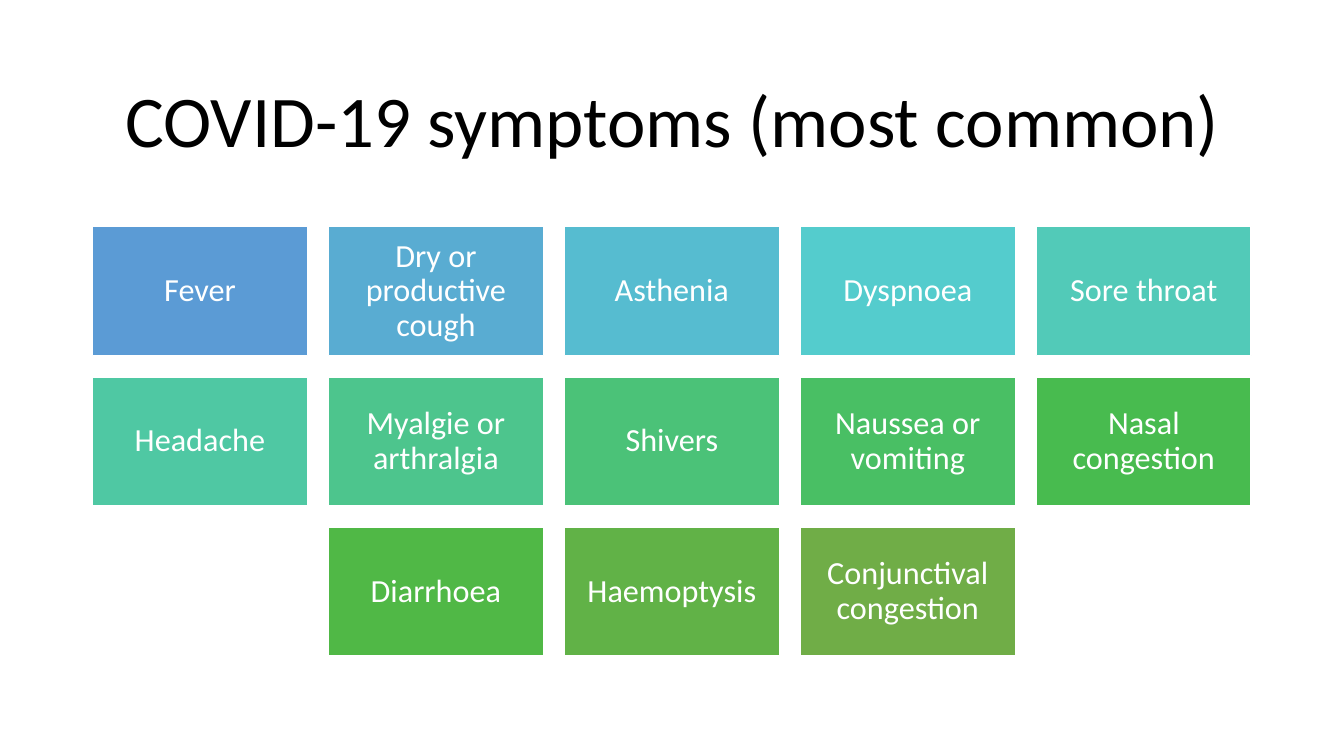
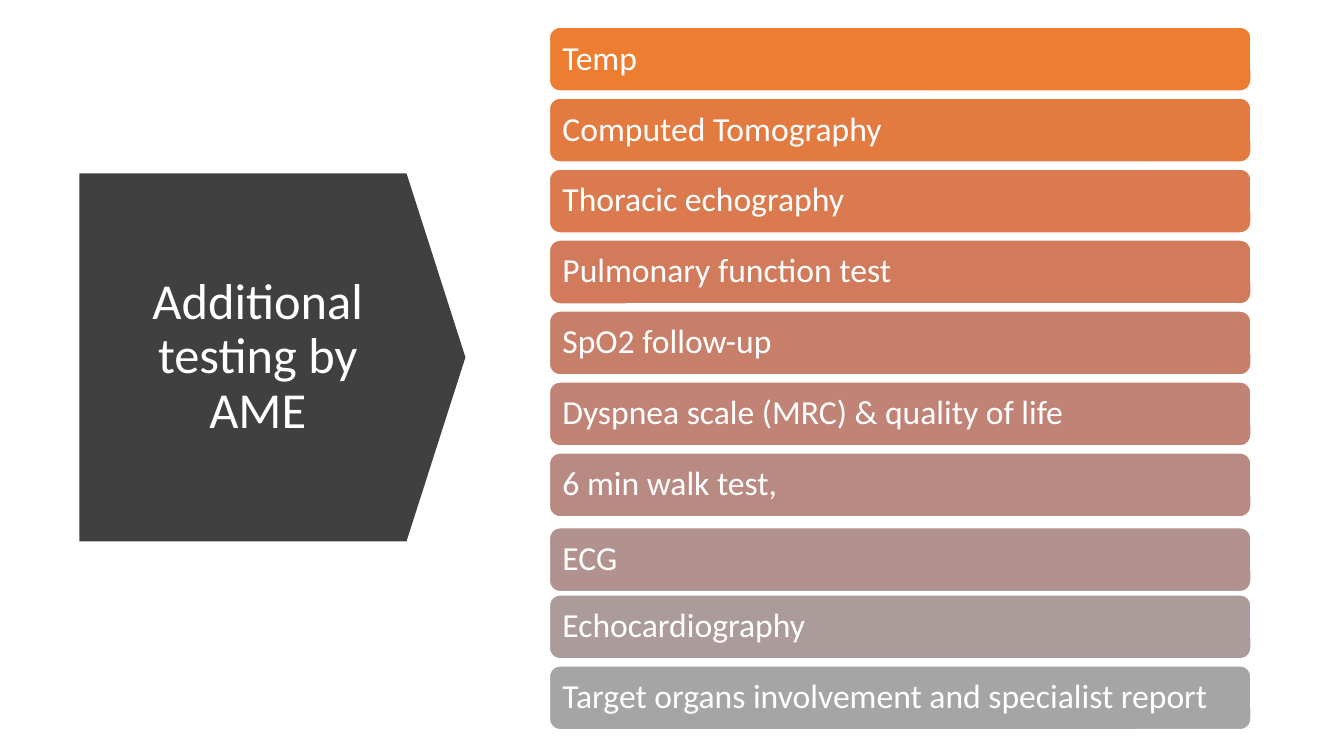
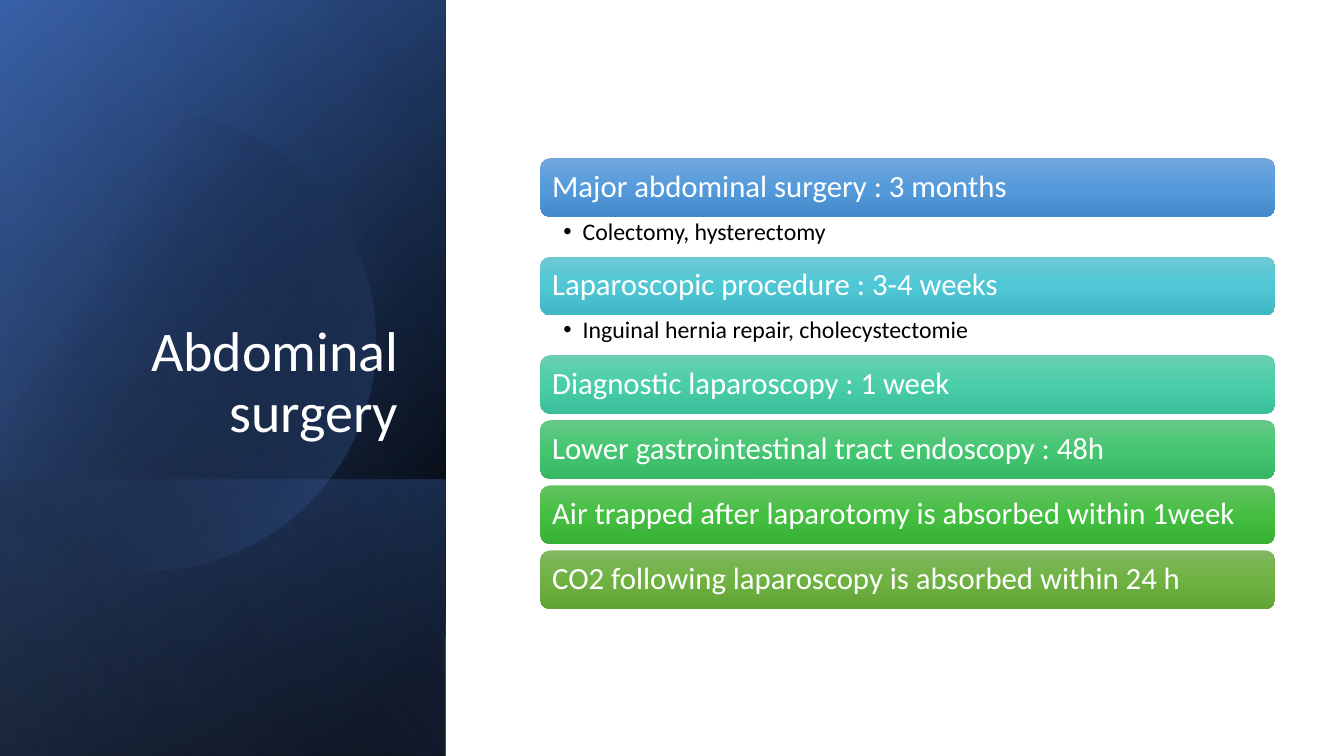
from dataclasses import dataclass
from math import acos, cos, sin

from lxml.etree import SubElement
from pptx import Presentation
from pptx.dml.color import RGBColor
from pptx.enum.shapes import MSO_SHAPE
from pptx.enum.text import MSO_ANCHOR, PP_ALIGN
from pptx.oxml.ns import qn
from pptx.util import Inches, Pt


@dataclass(frozen=True)
class Theme:
    font: str = "Calibri"
    white: str = "FFFFFF"
    black: str = "000000"
    charcoal: str = "404040"
    navy: str = "2F5597"
    blue: str = "4472C4"
    pale_blue: str = "8FAADC"
    headline: int = 52
    side_title: int = 40
    arrow_title: int = 36
    test: int = 24
    symptom: int = 23
    surgery: int = 22
    note: int = 17
    line_spacing: float = 0.9


@dataclass(frozen=True)
class Box:
    left: float
    top: float
    width: float
    height: float

    def share(self, left, top, width, height):
        return Box(
            self.left + self.width * left / 100,
            self.top + self.height * top / 100,
            self.width * width / 100,
            self.height * height / 100,
        )

    def cell(self, column, row, columns, rows, gap):
        width = (self.width - gap * (columns - 1)) / columns
        height = (self.height - gap * (rows - 1)) / rows
        return Box(
            self.left + column * (width + gap),
            self.top + row * (height + gap),
            width,
            height,
        )

    def quarter_turn(self):
        shift = (self.width - self.height) / 2
        return Box(self.left + shift, self.top - shift, self.height, self.width)

    def place(self):
        return [Inches(side) for side in (self.left, self.top, self.width, self.height)]


THEME = Theme()
SLIDE = Box(0, 0, 13.33, 7.5)

SYMPTOMS = [
    [
        ("Fever", "5B9BD5"),
        ("Dry or productive cough", "59ACD2"),
        ("Asthenia", "56BCD0"),
        ("Dyspnoea", "54CCCD"),
        ("Sore throat", "52CAB8"),
    ],
    [
        ("Headache", "4FC8A3"),
        ("Myalgie or arthralgia", "4DC58D"),
        ("Shivers", "4BC278"),
        ("Naussea or vomiting", "49BF64"),
        ("Nasal congestion", "48BB4F"),
    ],
    [
        ("Diarrhoea", "50B846"),
        ("Haemoptysis", "61B247"),
        ("Conjunctival congestion", "70AD47"),
    ],
]

TESTS = [
    ("Temp", "ED7D31", 0),
    ("Computed Tomography", "E37A40", 0),
    ("Thoracic echography", "DA7A4E", 0),
    ("Pulmonary function test", "D17B5C", 0),
    ("SpO2 follow-up", "C87F69", 0),
    ("Dyspnea scale (MRC) & quality of life", "C08376", 0),
    ("6 min walk test,", "B98A82", 0),
    ("ECG", "B2928E", 6),
    ("Echocardiography", "AB9B9A", 0),
    ("Target organs involvement and specialist report", "A5A5A5", 0),
]

SURGERIES = [
    ("Major abdominal surgery : 3 months", "Colectomy, hysterectomy",
     ("71A6DB", "559BDB", "448ACA")),
    ("Laparoscopic procedure : 3-4 weeks", "Inguinal hernia repair, cholecystectomie",
     ("6DCAD5", "4FC7D5", "3FB7C4")),
    ("Diagnostic laparoscopy : 1 week", None, ("69CFB1", "4ACEAA", "3BBE9A")),
    ("Lower gastrointestinal tract endoscopy : 48h", None,
     ("66C885", "45C772", "37B764")),
    ("Air trapped after laparotomy is absorbed within 1week", None,
     ("64C162", "44BF41", "37B034")),
    ("CO2 following laparoscopy is absorbed within 24 h", None,
     ("81B861", "6FB242", "62A336")),
]


def assign(target, values):
    for name, value in values.items():
        setattr(target, name, value)


def write_text(shape, text, size, colour, align=PP_ALIGN.LEFT,
               anchor=MSO_ANCHOR.MIDDLE, insets=(0.1, 0.1, 0.1, 0.1)):
    frame = shape.text_frame
    left, top, right, bottom = [Inches(inset) for inset in insets]
    assign(frame, {
        "word_wrap": True,
        "vertical_anchor": anchor,
        "margin_left": left,
        "margin_top": top,
        "margin_right": right,
        "margin_bottom": bottom,
    })
    para = frame.paragraphs[0]
    assign(para, {"alignment": align, "line_spacing": THEME.line_spacing})
    span = para.add_run()
    span.text = text
    assign(span.font, {"name": THEME.font, "size": Pt(size)})
    span.font.color.rgb = RGBColor.from_string(colour)
    return para


def add_title(page, box, text, size, colour, align=PP_ALIGN.CENTER,
              anchor=MSO_ANCHOR.MIDDLE):
    title = page.shapes.add_textbox(*box.place())
    write_text(title, text, size, colour, align, anchor, (0.1, 0.05, 0.1, 0.05))


def add_block(page, kind, box, fill=None, outline=None):
    block = page.shapes.add_shape(kind, *box.place())
    block.shadow.inherit = False
    if fill:
        block.fill.solid()
        block.fill.fore_color.rgb = RGBColor.from_string(fill)
    if outline:
        block.line.color.rgb = RGBColor.from_string(outline)
        block.line.width = Pt(1)
    else:
        block.line.fill.background()
    return block


def paint_gradient(shape, stops, angle):
    shape.fill.gradient()
    shape.fill.gradient_angle = 360 - angle
    stop_list = shape._element.spPr.find(".//" + qn("a:gsLst"))
    for old_stop in list(stop_list):
        stop_list.remove(old_stop)
    for position, colour, opacity in stops:
        stop = SubElement(stop_list, qn("a:gs"), pos=str(position * 1000))
        tint = SubElement(stop, qn("a:srgbClr"), val=colour)
        if opacity < 100:
            SubElement(tint, qn("a:alpha"), val=str(opacity * 1000))


def add_symptom_grid(page, box):
    columns = len(SYMPTOMS[0])
    for row, symptoms in enumerate(SYMPTOMS):
        indent = (columns - len(symptoms)) / 2
        for column, (symptom, colour) in enumerate(symptoms):
            cell = box.cell(column + indent, row, columns, len(SYMPTOMS), 0.21)
            tile = add_block(page, MSO_SHAPE.RECTANGLE, cell, colour, THEME.white)
            write_text(tile, symptom, THEME.symptom, THEME.white, PP_ALIGN.CENTER)


def add_title_arrow(page, box):
    arrow = add_block(page, MSO_SHAPE.PENTAGON, box, THEME.charcoal)
    arrow.adjustments[0] = 0.16
    add_title(page, box.share(8.62, 11.78, 75.2, 76.44), "Additional testing by AME",
              THEME.arrow_title, THEME.white)


def add_test_list(page, box):
    for row, (test, colour, nudge) in enumerate(TESTS):
        cell = box.cell(0, row, 1, len(TESTS), 0.07).share(0, nudge, 100, 100)
        bar = add_block(page, MSO_SHAPE.ROUNDED_RECTANGLE, cell, colour, THEME.white)
        write_text(bar, test, THEME.test, THEME.white)


def add_panel_layer(page, box, stops, angle):
    layer = add_block(page, MSO_SHAPE.RECTANGLE, box.quarter_turn())
    layer.rotation = 90
    layer._element.spPr.find(qn("a:xfrm")).set("flipH", "1")
    paint_gradient(layer, stops, angle)


def add_cut_circle(page, box):
    radius = box.height * 0.305
    centre_x = box.left + box.width * 0.326
    centre_y = box.top + box.height * 0.45
    reach = acos((box.left - centre_x) / radius)
    steps = 120
    turns = [reach * (2 * step / steps - 1) for step in range(steps + 1)]
    points = [
        (Inches(centre_x + radius * cos(turn)), Inches(centre_y + radius * sin(turn)))
        for turn in turns
    ]
    builder = page.shapes.build_freeform(*points[0])
    builder.add_line_segments(points[1:], close=True)
    circle = builder.convert_to_shape()
    circle.shadow.inherit = False
    circle.line.fill.background()
    paint_gradient(circle, [(29, THEME.black, 0), (100, THEME.blue, 43)], 30)


def add_side_panel(page, box):
    add_panel_layer(page, box, [(8, THEME.black, 100), (100, THEME.navy, 100)], 50)
    add_panel_layer(page, box, [(0, THEME.black, 0), (99, THEME.blue, 46)], 30)
    add_panel_layer(page, box.share(0, 63.47, 100, 36.53),
                    [(2, THEME.blue, 29), (100, THEME.black, 30)], 130)
    add_cut_circle(page, box)
    add_panel_layer(page, box, [(0, THEME.black, 0), (99, THEME.pale_blue, 11)], 120)
    add_title(page, box.share(14.48, 24.53, 77.15, 34.93), "Abdominal surgery",
              THEME.side_title, THEME.white, PP_ALIGN.RIGHT, MSO_ANCHOR.BOTTOM)


def add_note(page, box, text):
    note = page.shapes.add_textbox(*box.place())
    para = write_text(note, text, THEME.note, THEME.black, anchor=MSO_ANCHOR.TOP,
                      insets=(0.23, 0.03, 0.17, 0.03))
    properties = para._p.get_or_add_pPr()
    hang = Inches(0.19)
    properties.set("marL", str(hang))
    properties.set("indent", str(-hang))
    SubElement(properties, qn("a:buFont"), typeface="Arial")
    SubElement(properties, qn("a:buChar"), char="•")


def add_surgery_list(page, box):
    bar_share, note_share, gap_share = 13, 8.85, 1.45
    top = 0
    for surgery, example, colours in SURGERIES:
        bar = add_block(page, MSO_SHAPE.ROUNDED_RECTANGLE,
                        box.share(0, top, 100, bar_share))
        stops = [(50 * index, colour, 100) for index, colour in enumerate(colours)]
        paint_gradient(bar, stops, 90)
        write_text(bar, surgery, THEME.surgery, THEME.white,
                   insets=(0.09, 0.09, 0.09, 0.09))
        top += bar_share
        if example:
            add_note(page, box.share(0, top, 100, note_share), example)
        top += note_share if example else gap_share


def build_symptoms(page):
    add_title(page, SLIDE.share(6.9, 8.13, 86.25, 16.53),
              "COVID-19 symptoms (most common)", THEME.headline, THEME.black)
    add_symptom_grid(page, SLIDE.share(6.9, 30, 86.2, 56.8))


def build_testing(page):
    add_title_arrow(page, SLIDE.share(5.9, 22.93, 28.73, 48.67))
    add_test_list(page, SLIDE.share(40.88, 3.6, 52.2, 92.93))


def build_surgery(page):
    add_side_panel(page, SLIDE.share(0, 0, 33.16, 100))
    add_surgery_list(page, SLIDE.share(40.2, 20.93, 54.7, 59.6))


def main():
    deck = Presentation()
    assign(deck, {"slide_width": Inches(SLIDE.width),
                  "slide_height": Inches(SLIDE.height)})
    for build in (build_symptoms, build_testing, build_surgery):
        build(deck.slides.add_slide(deck.slide_layouts[6]))
    deck.save("out.pptx")


if __name__ == "__main__":
    main()
